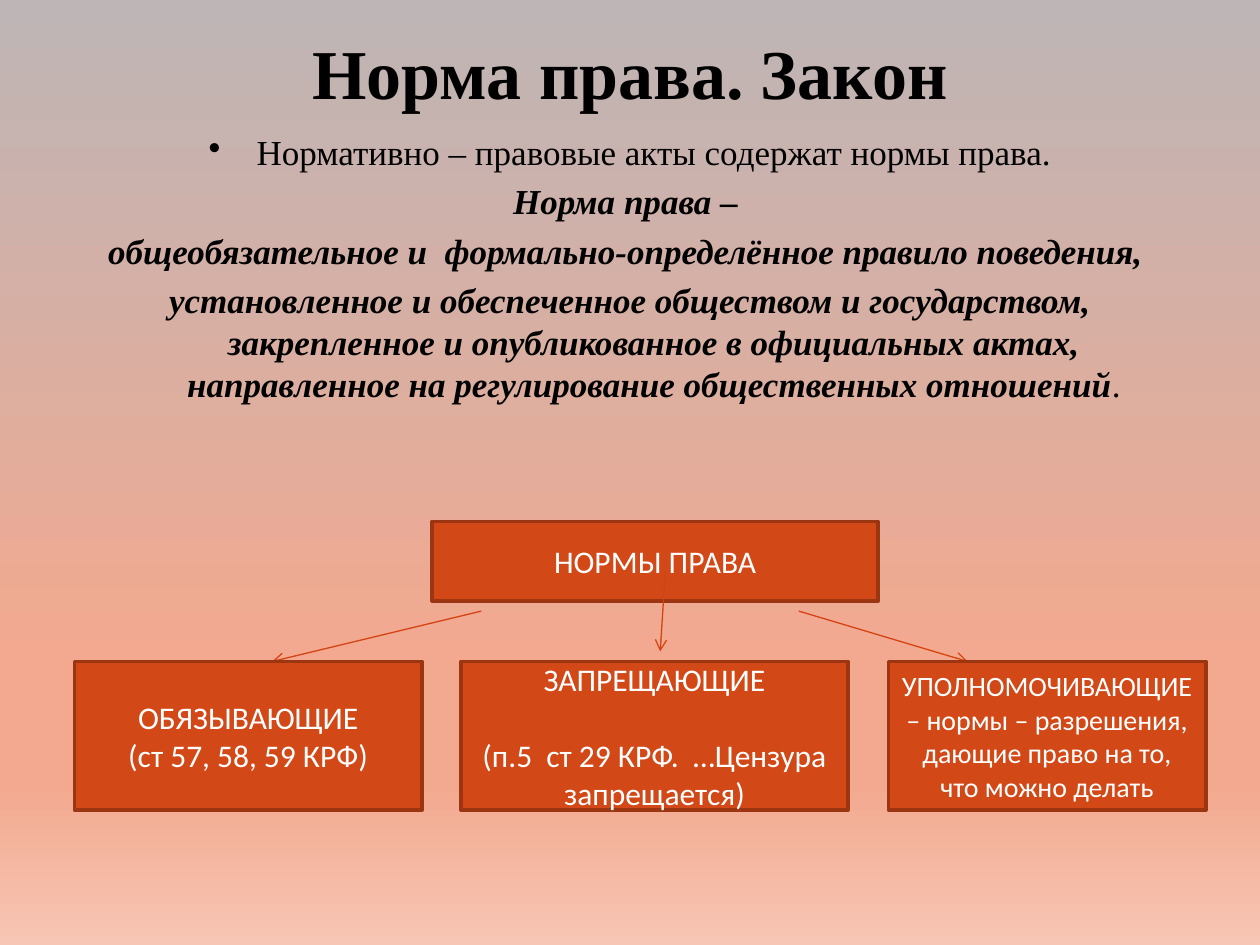
from dataclasses import dataclass

from lxml.etree import SubElement
from pptx import Presentation
from pptx.dml.color import RGBColor
from pptx.enum.shapes import MSO_CONNECTOR, MSO_SHAPE
from pptx.enum.text import MSO_ANCHOR, PP_ALIGN
from pptx.oxml.ns import qn
from pptx.slide import Slide
from pptx.text.text import TextFrame
from pptx.util import Inches, Pt


@dataclass(frozen=True)
class Theme:
    serif: str = "Times New Roman"
    sans: str = "Calibri"
    ink: str = "000000"
    light: str = "FFFFFF"
    box_fill: str = "D34817"
    box_line: str = "9C3511"
    arrow: str = "D34412"
    title_size: int = 40
    body_size: int = 20
    box_size: int = 18
    small_size: int = 16
    background: tuple = ((0, "BDB5B6"), (70, "F3A98F"), (83, "F3A98F"), (100, "F7C6B4"))


@dataclass(frozen=True)
class Node:
    left: float
    top: float
    width: float
    height: float
    lines: tuple[str, ...]
    size: int
    gap: float = 0


@dataclass(frozen=True)
class Arrow:
    start: tuple[float, float]
    end: tuple[float, float]


THEME = Theme()
BRANCH_TOP, BRANCH_HEIGHT = 5.25, 1.18

NODES = (
    Node(3.43, 4.14, 3.54, 0.63, ("НОРМЫ ПРАВА",), THEME.box_size),
    Node(0.59, BRANCH_TOP, 2.76, BRANCH_HEIGHT,
         ("ОБЯЗЫВАЮЩИЕ", "(ст 57, 58, 59 КРФ)"), THEME.box_size),
    Node(3.66, BRANCH_TOP, 3.07, BRANCH_HEIGHT,
         ("ЗАПРЕЩАЮЩИЕ", "(п.5  ст 29 КРФ.  …Цензура запрещается)"), THEME.box_size, gap=22),
    Node(7.05, BRANCH_TOP, 2.52, BRANCH_HEIGHT,
         ("УПОЛНОМОЧИВАЮЩИЕ – нормы – разрешения, дающие право на то, что можно делать",),
         THEME.small_size),
)
ARROWS = (
    Arrow((3.82, 4.85), (2.16, BRANCH_TOP)),
    Arrow((5.28, 4.54), (5.24, 5.17)),
    Arrow((6.34, 4.85), (7.68, BRANCH_TOP)),
)
INTRO = "Нормативно – правовые акты содержат нормы права."
DEFINITION = (
    "Норма права – ",
    "общеобязательное и  формально-определённое правило поведения, ",
    "установленное и обеспеченное обществом и государством, закрепленное и опубликованное "
    "в официальных актах, направленное на регулирование общественных отношений",
)


def paint_background(page: Slide) -> None:
    fill = page.background.fill
    fill.gradient()
    fill.gradient_angle = 270
    stops = page.background._cSld.find(".//" + qn("a:gsLst"))
    for stop in list(stops):
        stops.remove(stop)
    for percent, color in THEME.background:
        stop = SubElement(stops, qn("a:gs"), pos=str(percent * 1000))
        SubElement(stop, qn("a:srgbClr"), val=color)


def style_paragraph(para, font_name: str, size: int, color: str) -> None:
    para.alignment = PP_ALIGN.CENTER
    para.font.name = font_name
    para.font.size = Pt(size)
    para.font.color.rgb = RGBColor.from_string(color)


def add_text_box(page: Slide, left: float, top: float, width: float, height: float) -> TextFrame:
    box = page.shapes.add_textbox(Inches(left), Inches(top), Inches(width), Inches(height))
    box.text_frame.word_wrap = True
    return box.text_frame


def add_title(page: Slide) -> None:
    frame = add_text_box(page, 0.5, 0.3, 9, 0.54)
    frame.vertical_anchor = MSO_ANCHOR.MIDDLE
    para = frame.paragraphs[0]
    para.text = "Норма права. Закон"
    style_paragraph(para, THEME.serif, THEME.title_size, THEME.ink)
    para.font.bold = True


def add_body(page: Slide) -> None:
    frame = add_text_box(page, 0.5, 0.99, 9, 5.71)
    frame.text = "\n".join((INTRO, *DEFINITION))
    for index, para in enumerate(frame.paragraphs):
        style_paragraph(para, THEME.serif, THEME.body_size, THEME.ink)
        para.space_before = Pt(4)
        properties = para._p.get_or_add_pPr()
        properties.set("marL", str(Inches(0.38)))
        properties.set("indent", str(Inches(-0.38)))
        if index:
            para.runs[0].font.bold = para.runs[0].font.italic = True
        else:
            bullet = properties.makeelement(qn("a:buChar"), {"char": "•"})
            properties.find(qn("a:defRPr")).addprevious(bullet)
    frame.paragraphs[-1].add_run().text = "."


def add_node(page: Slide, node: Node) -> None:
    box = page.shapes.add_shape(MSO_SHAPE.RECTANGLE, Inches(node.left), Inches(node.top),
                                Inches(node.width), Inches(node.height))
    box.shadow.inherit = False
    box.fill.solid()
    box.fill.fore_color.rgb = RGBColor.from_string(THEME.box_fill)
    box.line.color.rgb = RGBColor.from_string(THEME.box_line)
    box.line.width = Pt(2)
    frame = box.text_frame
    frame.word_wrap = True
    frame.vertical_anchor = MSO_ANCHOR.MIDDLE
    frame.text = "\n".join(node.lines)
    for para in frame.paragraphs:
        style_paragraph(para, THEME.sans, node.size, THEME.light)
    if node.gap:
        frame.paragraphs[-1].space_before = Pt(node.gap)


def add_arrow(page: Slide, arrow: Arrow) -> None:
    points = [Inches(value) for value in (*arrow.start, *arrow.end)]
    connector = page.shapes.add_connector(MSO_CONNECTOR.STRAIGHT, *points)
    connector.line.color.rgb = RGBColor.from_string(THEME.arrow)
    connector.line.width = Pt(0.75)
    SubElement(connector.line._get_or_add_ln(), qn("a:tailEnd"), type="arrow")
    SubElement(connector._element.spPr, qn("a:effectLst"))


def main() -> None:
    deck = Presentation()
    deck.slide_width, deck.slide_height = Inches(10), Inches(7.5)
    page = deck.slides.add_slide(deck.slide_layouts[6])
    paint_background(page)
    add_title(page)
    add_body(page)
    root, *branches = NODES
    add_node(page, root)
    for arrow in ARROWS:
        add_arrow(page, arrow)
    for branch in branches:
        add_node(page, branch)
    deck.save("out.pptx")


if __name__ == "__main__":
    main()
